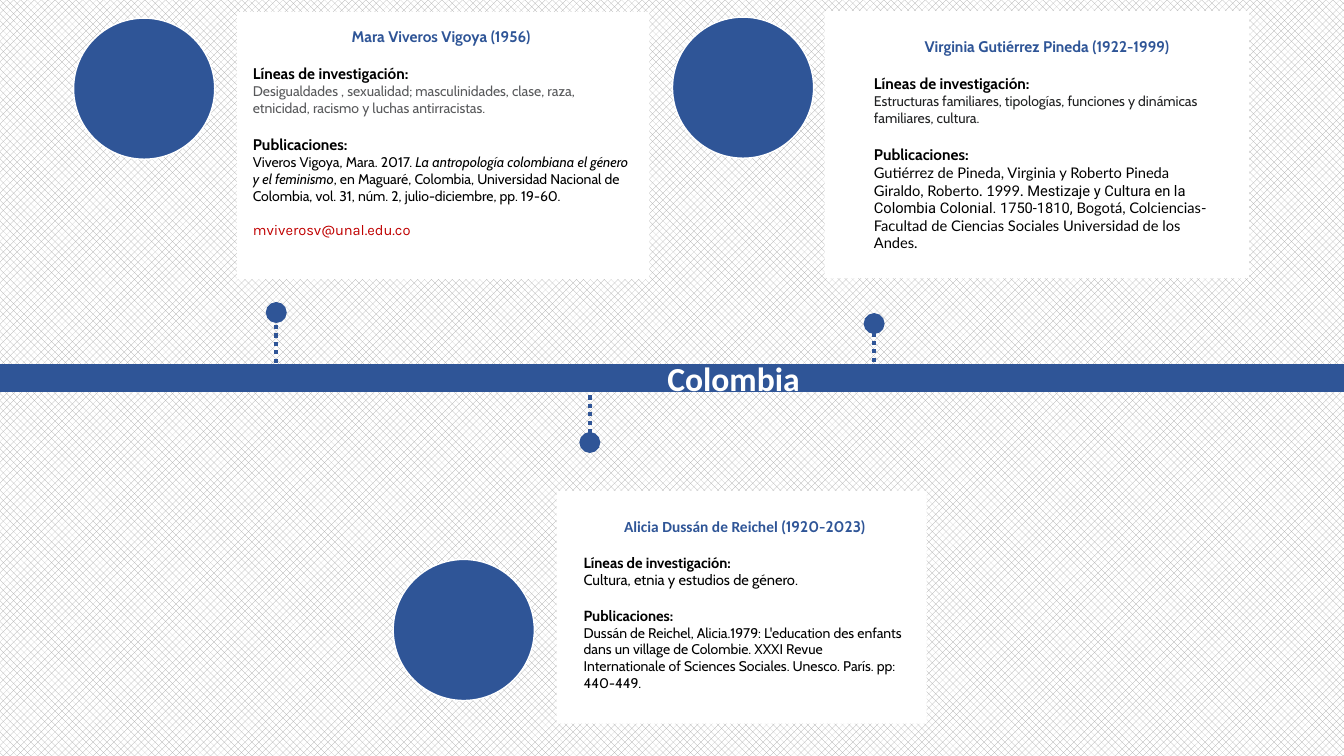
from lxml.etree import SubElement
from pptx import Presentation
from pptx.dml.color import RGBColor
from pptx.enum.dml import MSO_LINE, MSO_PATTERN
from pptx.enum.shapes import MSO_CONNECTOR, MSO_SHAPE
from pptx.enum.text import MSO_AUTO_SIZE, PP_ALIGN
from pptx.oxml.ns import qn
from pptx.util import Inches, Pt

BLUE, WHITE, BLACK = "2F5597", "FFFFFF", "000000"
PORTRAIT_SIZE = 1.4
LINE_HEIGHT = 1.215  # Cabin line height relative to its size


def rgb(value):
    return RGBColor.from_string(value)


def run(text, size=10, color=BLACK, font="Cabin", bold=False, italic=False):
    return text, size, color, font, bold, italic


def title(*runs):
    return PP_ALIGN.CENTER, 0, runs


def para(*runs, gap=0):
    """Left paragraph; gap is the text size of the empty line above it."""
    return PP_ALIGN.LEFT, gap * LINE_HEIGHT, runs


def heading(text, size=11):
    return para(run(text, size, bold=True), gap=size)


def add_text(slide, box, paragraphs):
    frame = slide.shapes.add_textbox(*map(Inches, box)).text_frame
    frame.word_wrap = True
    frame.auto_size = MSO_AUTO_SIZE.SHAPE_TO_FIT_TEXT
    for index, (align, space, runs) in enumerate(paragraphs):
        paragraph = frame.add_paragraph() if index else frame.paragraphs[0]
        paragraph.alignment = align
        paragraph.space_before = Pt(space)
        for text, size, color, font, bold, italic in runs:
            piece = paragraph.add_run()
            piece.text = text
            piece.font.size = Pt(size)
            piece.font.color.rgb = rgb(color)
            piece.font.name = font
            piece.font.bold = bold
            piece.font.italic = italic


def add_filled(slide, kind, box, color, outline=None):
    shape = slide.shapes.add_shape(kind, *map(Inches, box))
    shape.shadow.inherit = False
    shape.fill.solid()
    shape.fill.fore_color.rgb = rgb(color)
    if outline:
        shape.line.color.rgb = rgb(outline)
        shape.line.width = Pt(1)
    else:
        shape.line.fill.background()


def add_line(slide, start, end, width):
    line = slide.shapes.add_connector(
        MSO_CONNECTOR.STRAIGHT, *map(Inches, (*start, *end)))
    line.line.color.rgb = rgb(BLUE)
    line.line.width = Pt(width)
    SubElement(line._element.spPr, qn("a:effectLst"))
    return line


def add_marker(slide, x, start, end):
    """Dotted stem from the timeline with a round dot at its far end."""
    stem = add_line(slide, (x, start), (x, end), 3)
    stem.line.dash_style = MSO_LINE.ROUND_DOT
    SubElement(stem.line._get_or_add_ln(), qn("a:tailEnd"),
               type="oval", w="lg", len="lg")


def add_researcher(slide, card, portrait, text_box, paragraphs):
    add_filled(slide, MSO_SHAPE.RECTANGLE, card, WHITE)
    add_text(slide, text_box, paragraphs)
    add_filled(slide, MSO_SHAPE.OVAL,
               (*portrait, PORTRAIT_SIZE, PORTRAIT_SIZE), BLUE, WHITE)


def main():
    prs = Presentation()
    prs.slide_width, prs.slide_height = Inches(13.33), Inches(7.5)
    slide = prs.slides.add_slide(prs.slide_layouts[6])
    background = slide.background.fill
    background.patterned()
    background.pattern = MSO_PATTERN.PERCENT_50
    background.fore_color.rgb = rgb("A6A6A6")
    background.back_color.rgb = rgb(WHITE)

    add_line(slide, (0, 3.75), (13.33, 3.75), 20)
    for x, start, end in ((2.74, 3.6, 3.1), (5.85, 3.84, 4.39),
                          (8.67, 3.59, 3.21)):
        add_marker(slide, x, start, end)

    research, publications = "Líneas de investigación:", "Publicaciones:"
    add_researcher(
        slide, (2.35, 0.12, 4.09, 2.65), (0.73, 0.18), (2.41, 0.22, 3.93, 2.42),
        [title(run("Mara Viveros Vigoya (1956)", 11, BLUE, bold=True)),
         heading(research),
         para(run("Desigualdades , sexualidad; masculinidades, clase, raza, "
                  "etnicidad, racismo y luchas antirracistas.", color="58595B")),
         heading(publications),
         para(run("Viveros Vigoya, Mara. 2017. "),
              run("La antropología colombiana el género y el feminismo",
                  italic=True),
              run(", en Maguaré, Colombia, Universidad Nacional de Colombia, "
                  "vol. 31, núm. 2, julio-diciembre, pp. 19-60.")),
         para(run("mviverosv@unal.edu.co", 10.5, "C00000", "Karla"), gap=10)])
    add_researcher(
        slide, (5.52, 4.87, 3.67, 2.31), (3.9, 5.55), (5.69, 5.08, 3.39, 1.84),
        [title(run("Alicia Dussán de Reichel", 11, BLUE, "Calibri", bold=True),
               run(" (1920-2023)", 11, BLUE, bold=True)),
         heading(research, 10.5),
         para(run("Cultura, etnia y estudios de género.", 10.5)),
         heading(publications, 10.5),
         para(run("Dussán de Reichel, Alicia.1979: L'education des enfants dans "
                  "un village de Colombie. XXXI Revue Internationale of Sciences "
                  "Sociales. Unesco. París. pp: 440-449."))])
    add_researcher(
        slide, (8.18, 0.11, 4.21, 2.65), (6.67, 0.17), (8.57, 0.32, 3.63, 2.07),
        [title(run("Virginia Gutiérrez Pineda (1922-1999)", 11, BLUE, bold=True)),
         heading(research),
         para(run("Estructuras familiares, tipologías, funciones y dinámicas "
                  "familiares, cultura.", color="202122")),
         heading(publications),
         para(run("Gutiérrez de Pineda, Virginia y Roberto Pineda Giraldo, "
                  "Roberto. 1999.", 10.5, font="Lato"),
              run(" Mestizaje y Cultura en la Colombia Colonial. 1750-1810,",
                  10.5, font="Roboto"),
              run(" Bogotá, Colciencias-Facultad de Ciencias Sociales "
                  "Universidad de los Andes.", 10.5, font="Lato"))])
    add_text(slide, (6.52, 3.5, 1.55, 0.5),
             [para(run("Colombia", 24, WHITE, "Calibri", bold=True))])
    prs.save("out.pptx")


if __name__ == "__main__":
    main()
